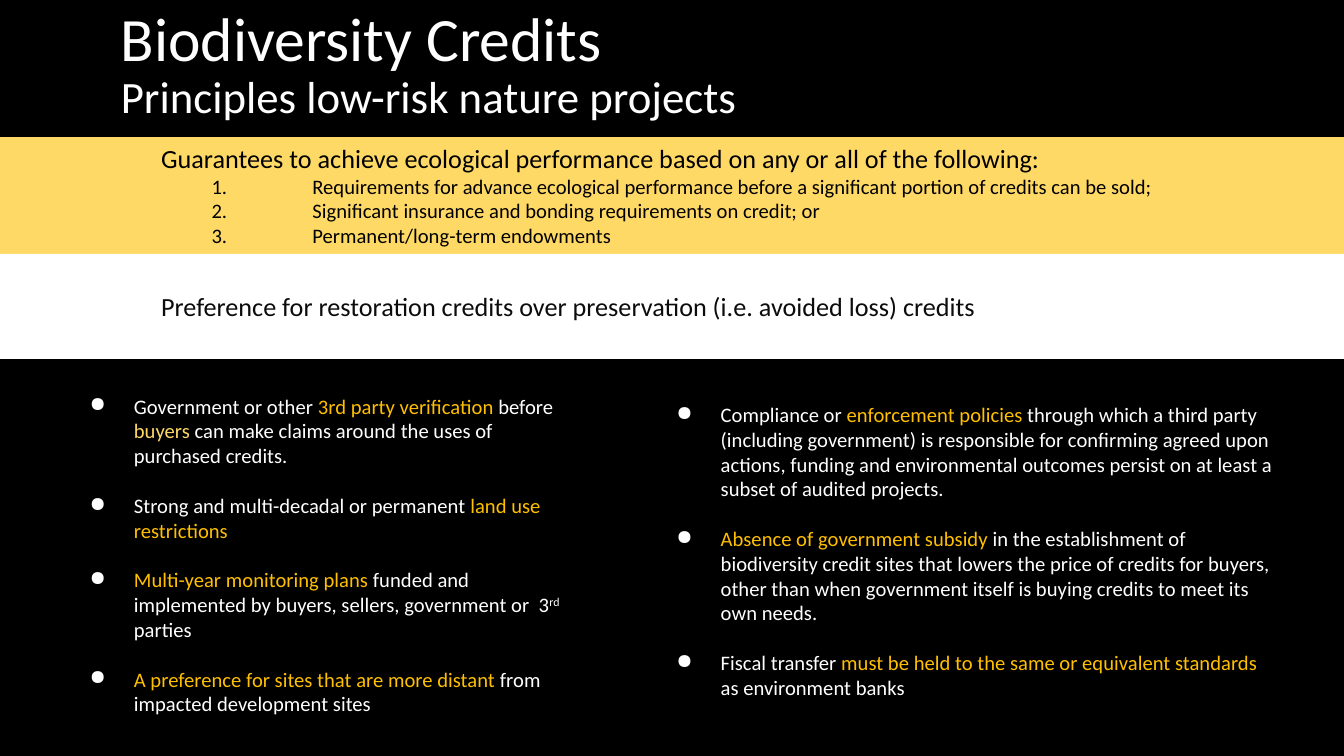
from dataclasses import dataclass

from lxml import etree
from pptx import Presentation
from pptx.dml.color import RGBColor
from pptx.enum.shapes import MSO_SHAPE
from pptx.enum.text import MSO_ANCHOR, PP_ALIGN
from pptx.oxml.ns import qn
from pptx.util import Inches, Pt

RECTANGLE = MSO_SHAPE.RECTANGLE
TOP, MIDDLE = MSO_ANCHOR.TOP, MSO_ANCHOR.MIDDLE
LEFT = PP_ALIGN.LEFT


@dataclass(frozen=True)
class Theme:
    font: str = "Calibri"
    black: str = "000000"
    white: str = "FFFFFF"
    ink: str = "0C0C0C"
    gold: str = "FFD966"
    amber: str = "FFC000"
    title: float = 44
    subtitle: float = 32
    lead: float = 18.7
    body: float = 14.7
    line_height: float = 17.9


THEME = Theme()


@dataclass(frozen=True)
class Span:
    text: str
    color: str | None = None
    superscript: bool = False


@dataclass(frozen=True)
class Para:
    spans: tuple[Span, ...]
    size: float = THEME.body
    color: str = THEME.white
    margin: float = 0
    hanging: float = 0
    bullet: str = ""
    space_before: float = 0
    line_spacing: float = 1


@dataclass(frozen=True)
class Box:
    left: float
    top: float
    width: float
    height: float
    paras: list[Para]
    fill: str | None = None
    anchor: MSO_ANCHOR = TOP
    bottom_inset: float = 0.05


def plain(text: str, **style) -> Para:
    return Para((Span(text),), **style)


def key(text: str) -> Span:
    return Span(text, THEME.amber)


def bullets(*items: tuple[Span, ...]) -> list[Para]:
    return [
        Para(spans, margin=0.67, hanging=0.44, bullet="●",
             space_before=THEME.line_height if index else 0)
        for index, spans in enumerate(items)
    ]


TITLE = [
    plain("Biodiversity Credits", size=THEME.title, line_spacing=0.9),
    plain("Principles low-risk nature projects", size=THEME.subtitle, line_spacing=0.9),
]

GUARANTEES = [
    "Requirements for advance ecological performance before a significant portion of credits can be sold;",
    "Significant insurance and bonding requirements on credit; or",
    "Permanent/long-term endowments",
]

GUARANTEE_PARAS = [
    plain("Guarantees to achieve ecological performance based on any or all of the following:",
          size=THEME.lead, color=THEME.black, margin=1.5),
    *(plain(f"{number}.\t{text}", color=THEME.black, margin=3, hanging=1)
      for number, text in enumerate(GUARANTEES, 1)),
]

PREFERENCE = [
    plain("Preference for restoration credits over preservation (i.e. avoided loss) credits",
          size=THEME.lead, color=THEME.ink, margin=1.5),
]

SAFEGUARDS = bullets(
    (Span("Government or other "), key("3rd party verification"), Span(" before "),
     Span("buyers", THEME.gold),
     Span(" can make claims around the uses of purchased credits.")),
    (Span("Strong and multi-decadal or permanent "), key("land use restrictions")),
    (key("Multi-year monitoring plans "),
     Span("funded and implemented by buyers, sellers, government or  3"),
     Span("rd", superscript=True), Span(" parties")),
    (key("A preference for sites that are more distant"),
     Span(" from impacted development sites")),
)

POLICIES = bullets(
    (Span("Compliance or"), key(" enforcement policies"),
     Span(" through which a third party (including government) is responsible for "
          "confirming agreed upon actions, funding and environmental outcomes persist "
          "on at least a subset of audited projects.")),
    (key("Absence of government subsidy"),
     Span(" in the establishment of biodiversity credit sites that lowers the price of "
          "credits for buyers, other than when government itself is buying credits to "
          "meet its own needs.")),
    (Span("Fiscal transfer "), key("must be held to the same or equivalent standards"),
     Span(" as environment banks")),
)

BOXES = [
    Box(0.56, 3.85, 5.14, 3.56, SAFEGUARDS, THEME.black, MIDDLE, bottom_inset=0.3),
    Box(1.1, -0.07, 11.32, 1.45, TITLE, anchor=MIDDLE),
    Box(0, 1.36, 13.33, 1.16, GUARANTEE_PARAS, THEME.gold),
    Box(0, 2.52, 13.33, 1.04, PREFERENCE, THEME.white, MIDDLE),
    Box(6.38, 3.94, 6.34, 3.06, POLICIES),
]


def set_indent(paragraph, para: Para) -> None:
    properties = paragraph._p.get_or_add_pPr()
    properties.set("marL", str(Inches(para.margin)))
    properties.set("indent", str(-Inches(para.hanging)))
    if para.bullet:
        color = etree.SubElement(properties, qn("a:buClr"))
        etree.SubElement(color, qn("a:srgbClr")).set("val", para.color)
        etree.SubElement(properties, qn("a:buChar")).set("char", para.bullet)


def write_paragraph(paragraph, para: Para) -> None:
    set_indent(paragraph, para)
    paragraph.alignment = LEFT
    paragraph.line_spacing = para.line_spacing
    paragraph.space_before = Pt(para.space_before)
    paragraph.font.name = THEME.font
    paragraph.font.size = Pt(para.size)
    paragraph.font.color.rgb = RGBColor.from_string(para.color)
    for span in para.spans:
        run = paragraph.add_run()
        run.text = span.text
        if span.color:
            run.font.color.rgb = RGBColor.from_string(span.color)
        if span.superscript:
            run._r.get_or_add_rPr().set("baseline", "30000")


def draw_box(page, box: Box) -> None:
    place = [Inches(length) for length in (box.left, box.top, box.width, box.height)]
    if box.fill:
        shape = page.shapes.add_shape(RECTANGLE, *place)
        shape.shadow.inherit = False
        shape.fill.solid()
        shape.fill.fore_color.rgb = RGBColor.from_string(box.fill)
        shape.line.fill.background()
    else:
        shape = page.shapes.add_textbox(*place)
    frame = shape.text_frame
    frame.word_wrap = True
    frame.vertical_anchor = box.anchor
    frame.margin_bottom = Inches(box.bottom_inset)
    for index, para in enumerate(box.paras):
        write_paragraph(frame.add_paragraph() if index else frame.paragraphs[0], para)


def main() -> None:
    deck = Presentation()
    deck.slide_width, deck.slide_height = Inches(13.33), Inches(7.5)
    page = deck.slides.add_slide(deck.slide_layouts[6])
    page.background.fill.solid()
    page.background.fill.fore_color.rgb = RGBColor.from_string(THEME.black)
    for box in BOXES:
        draw_box(page, box)
    deck.save("out.pptx")


if __name__ == "__main__":
    main()
